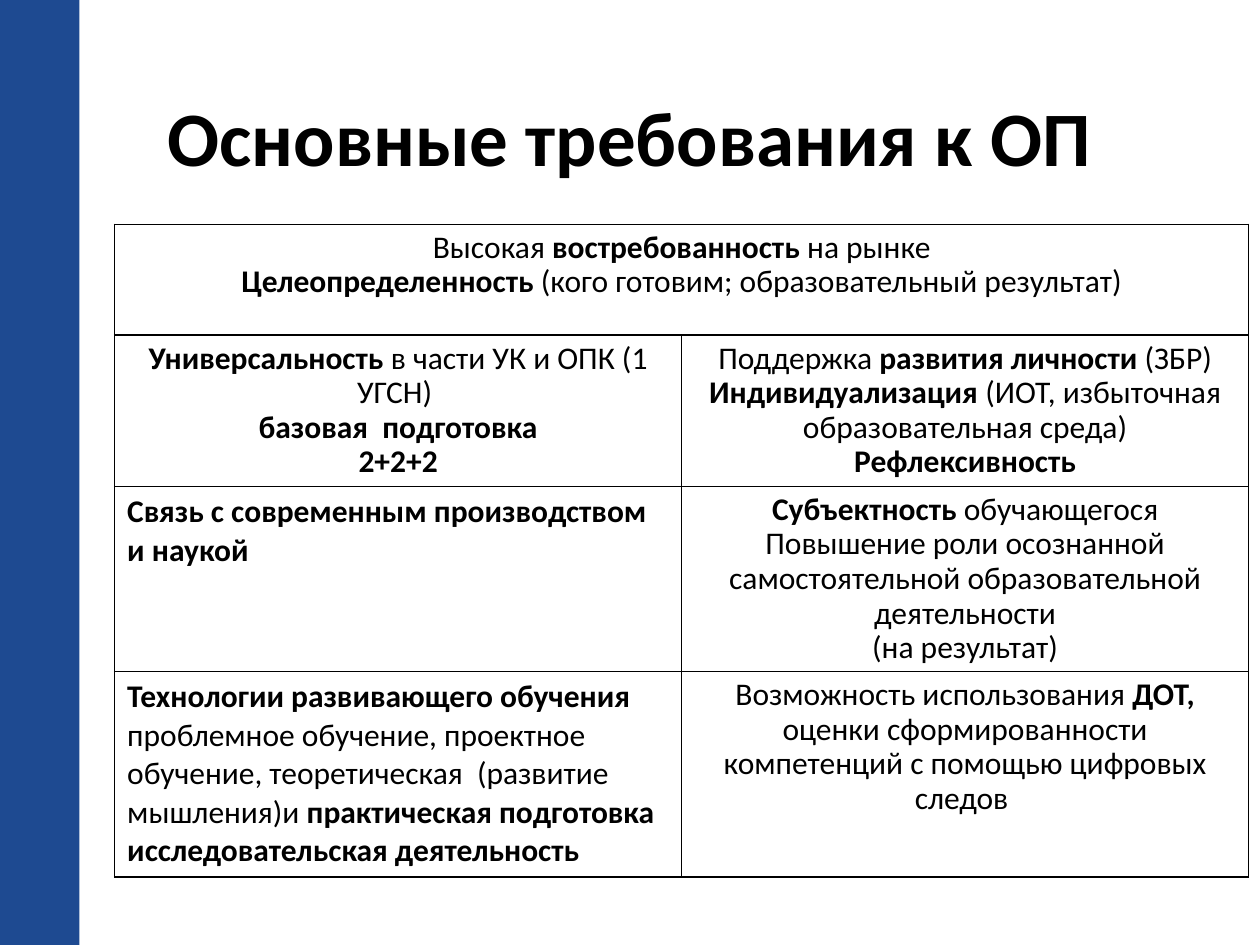
from dataclasses import dataclass

from lxml.etree import SubElement
from pptx import Presentation
from pptx.dml.color import RGBColor
from pptx.enum.shapes import MSO_SHAPE
from pptx.enum.text import MSO_ANCHOR, PP_ALIGN
from pptx.oxml.ns import qn
from pptx.util import Inches, Pt


@dataclass(frozen=True)
class Theme:
    """Colours, font and type sizes of the slide."""
    font: str = "Calibri"
    title_size: int = 44
    body_size: int = 18
    text: str = "000000"
    band: str = "1E4A91"
    border: str = "000000"
    border_width: int = 1


THEME = Theme()
CENTERED = {"alignment": PP_ALIGN.CENTER, "line_spacing": 0.9}
LEFT = {"alignment": PP_ALIGN.LEFT}
ROW_HEIGHTS = [0.88, 1.2, 1.47, 1.63]
COLUMN_WIDTH = 4.5

# Asterisks enclose the bold parts of a paragraph.
REQUIREMENTS = {
    (0, 0): (CENTERED, ["Высокая *востребованность *на рынке",
                        "*Целеопределенность* (кого готовим; образовательный результат)"]),
    (1, 0): (CENTERED, ["*Универсальность* в части УК и ОПК (1 УГСН) ",
                        "*базовая  подготовка*",
                        "*2+2+2*"]),
    (1, 1): (CENTERED, ["Поддержка *развития личности *(ЗБР)",
                        "*Индивидуализация *(ИОТ, избыточная образовательная среда)",
                        "*Рефлексивность*"]),
    (2, 0): (LEFT, ["*Связь с современным производством и наукой*"]),
    (2, 1): (CENTERED, ["*Субъектность* обучающегося",
                        "Повышение роли осознанной самостоятельной образовательной деятельности",
                        "(на результат)"]),
    (3, 0): (LEFT, ["*Технологии развивающего обучения *проблемное обучение, проектное обучение, "
                    "теоретическая  (развитие мышления)и "
                    "*практическая подготовка исследовательская деятельность*"]),
    (3, 1): (CENTERED, ["Возможность использования *ДОТ,*",
                        "оценки сформированности компетенций с помощью цифровых следов "]),
}


def apply_format(target, values):
    """Set each named attribute on the target."""
    for name, value in values.items():
        setattr(target, name, value)


def write_paragraphs(text_frame, texts, size, paragraph_format):
    """Fill a text frame, making the parts between asterisks bold."""
    for index, text in enumerate(texts):
        paragraph = text_frame.add_paragraph() if index else text_frame.paragraphs[0]
        apply_format(paragraph, paragraph_format)
        for position, part in enumerate(text.split("*")):
            if part:
                run = paragraph.add_run()
                run.text = part
                apply_format(run.font, {"name": THEME.font, "size": Pt(size),
                                        "bold": position % 2 == 1})
                run.font.color.rgb = RGBColor.from_string(THEME.text)


def add_band(slide):
    """Add the coloured band along the left edge."""
    shape = slide.shapes.add_shape(MSO_SHAPE.RECTANGLE, 0, 0, Inches(0.63), Inches(7.5))
    shape.shadow.inherit = False
    shape.fill.solid()
    shape.fill.fore_color.rgb = RGBColor.from_string(THEME.band)
    shape.line.fill.background()


def add_title(slide, text):
    """Add the centred slide title."""
    shape = slide.shapes.add_textbox(Inches(0.5), Inches(0.45), Inches(9), Inches(1.25))
    apply_format(shape.text_frame, {"word_wrap": True, "vertical_anchor": MSO_ANCHOR.MIDDLE})
    write_paragraphs(shape.text_frame, [text], THEME.title_size,
                     {"alignment": PP_ALIGN.CENTER})


def style_cell(cell):
    """Give a cell no fill and a thin line on every side."""
    properties = cell._tc.get_or_add_tcPr()
    for side in ("a:lnL", "a:lnR", "a:lnT", "a:lnB"):
        line = SubElement(properties, qn(side), w=str(Pt(THEME.border_width)))
        fill = SubElement(line, qn("a:solidFill"))
        SubElement(fill, qn("a:srgbClr"), val=THEME.border)
    cell.fill.background()


def add_requirements_table(slide):
    """Add the table of requirements with its merged first row."""
    frame = slide.shapes.add_table(len(ROW_HEIGHTS), 2, Inches(0.91), Inches(1.78),
                                   Inches(2 * COLUMN_WIDTH), Inches(sum(ROW_HEIGHTS)))
    table = frame.table
    apply_format(table, {"first_row": False, "horz_banding": False})
    for row, height in zip(table.rows, ROW_HEIGHTS):
        row.height = Inches(height)
    for cell in table.iter_cells():
        style_cell(cell)
    table.cell(0, 0).merge(table.cell(0, 1))
    for (row, column), (paragraph_format, texts) in REQUIREMENTS.items():
        write_paragraphs(table.cell(row, column).text_frame, texts,
                         THEME.body_size, paragraph_format)


def main():
    """Build the slide and save it."""
    presentation = Presentation()
    apply_format(presentation, {"slide_width": Inches(10), "slide_height": Inches(7.5)})
    slide = presentation.slides.add_slide(presentation.slide_layouts[6])
    add_title(slide, "*Основные требования к ОП*")
    add_requirements_table(slide)
    add_band(slide)
    presentation.save("out.pptx")


if __name__ == "__main__":
    main()
